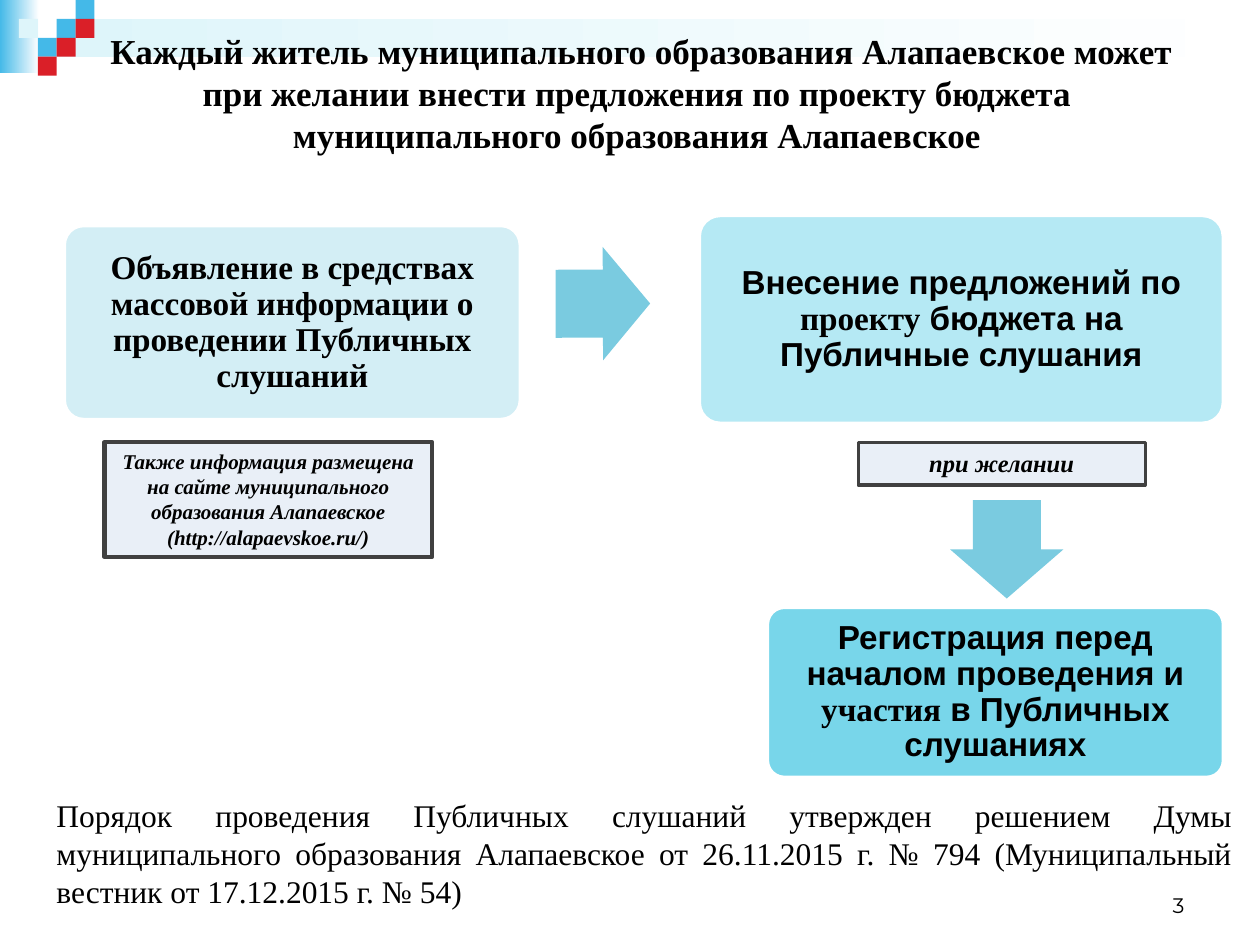
from dataclasses import dataclass

from pptx import Presentation
from pptx.dml.color import RGBColor
from pptx.enum import shapes, text
from pptx.util import Inches, Pt

COLORS = {
    "sky": "44B9E8", "pale": "DEF5FA", "red": "DA1F28", "white": "FFFFFF",
    "announce": "D3EEF5", "propose": "B5E9F4", "register": "78D6EA",
    "arrow": "7ACBE0", "note": "E9EFF7", "border": "404040", "black": "000000",
}
SERIF, SANS = "Times New Roman", "Arial"
SHAPE, ALIGN, ANCHOR = shapes.MSO_SHAPE, text.PP_ALIGN, text.MSO_ANCHOR
SQUARE = 0.15


@dataclass(frozen=True)
class Box:
    left: float
    top: float
    width: float
    height: float

    def lengths(self) -> tuple:
        return tuple(Inches(v) for v in (self.left, self.top, self.width, self.height))


@dataclass(frozen=True)
class Step:
    box: Box
    color: str
    runs: tuple


@dataclass(frozen=True)
class Arrow:
    box: Box
    rotation: float


@dataclass(frozen=True)
class Note:
    box: Box
    border: float
    size: int
    lines: tuple


STEPS = (
    Step(Box(0.51, 1.79, 3.62, 1.54), "announce",
         (("Объявление в средствах массовой информации о проведении Публичных слушаний", SERIF),)),
    Step(Box(5.55, 1.71, 4.16, 1.65), "propose",
         (("Внесение предложений по ", SANS), ("проекту", SERIF),
          (" бюджета на Публичные слушания", SANS))),
    Step(Box(6.09, 4.82, 3.62, 1.35), "register",
         (("Регистрация перед началом проведения и ", SANS), ("участия", SERIF),
          (" в Публичных слушаниях", SANS))),
)
ARROWS = (Arrow(Box(4.41, 1.96, 0.75, 0.9), 359.8), Arrow(Box(7.6, 3.91, 0.78, 0.9), 90))
NOTES = (
    Note(Box(6.81, 3.51, 2.28, 0.34), 1.75, 14, ("при желании",)),
    Note(Box(0.83, 3.51, 2.6, 0.91), 2.5, 12,
         ("Также информация размещена на сайте муниципального образования Алапаевское",
          "(http://alapaevskoe.ru/)")),
)
# Column, row and colour of each corner square
SQUARES = ((3, 1, "sky"), (4, 0, "sky"), (4, 1, "red"), (2, 2, "sky"),
           (1, 1, "pale"), (3, 2, "red"), (2, 3, "red"))


def rgb(name: str) -> RGBColor:
    return RGBColor.from_string(COLORS[name])


def add_figure(slide, kind, box: Box, color: str, border: str = "", width: float = 0):
    figure = slide.shapes.add_shape(kind, *box.lengths())
    figure.shadow.inherit = False
    figure.fill.solid()
    figure.fill.fore_color.rgb = rgb(color)
    if border:
        figure.line.color.rgb = rgb(border)
        figure.line.width = Pt(width)
    else:
        figure.line.fill.background()
    return figure


def add_fade(slide, box: Box, color: str) -> None:
    """Draw a bar that fades to white from left to right."""
    bar = add_figure(slide, SHAPE.RECTANGLE, box, color)
    bar.fill.gradient()
    bar.fill.gradient_angle = 0
    for stop, name, position in zip(bar.fill.gradient_stops, (color, "white"), (0, 1)):
        stop.color.rgb = rgb(name)
        stop.position = position


def format_frame(frame, **values) -> None:
    for name, value in {"word_wrap": True, **values}.items():
        setattr(frame, name, value)


def write(paragraph, words: str, font: str, size: float, **styles) -> None:
    run = paragraph.add_run()
    run.text = words
    for name, value in {"name": font, "size": Pt(size), **styles}.items():
        setattr(run.font, name, value)
    run.font.color.rgb = rgb("black")


def add_corner(slide) -> None:
    add_fade(slide, Box(0, 0, 0.31, 0.58), "sky")
    add_fade(slide, Box(0.45, 0.15, 9.55, 0.3), "pale")
    for column, row, color in SQUARES:
        add_figure(slide, SHAPE.RECTANGLE,
                   Box(column * SQUARE, row * SQUARE, SQUARE, SQUARE), color)


def add_title(slide) -> None:
    title = slide.shapes.title
    slide.shapes.element.append(title.element)  # in front of the corner bars
    title.left, title.top, title.width, title.height = Box(0.59, 0.21, 9, 1.05).lengths()
    format_frame(title.text_frame, vertical_anchor=ANCHOR.MIDDLE,
                 auto_size=text.MSO_AUTO_SIZE.NONE)
    heading = title.text_frame.paragraphs[0]
    heading.alignment = ALIGN.CENTER
    write(heading, "Каждый житель муниципального образования Алапаевское может "
          "при желании внести предложения по проекту бюджета ", SERIF, 20, bold=True)
    heading.add_line_break()
    write(heading, "муниципального образования Алапаевское ", SERIF, 20, bold=True)


def add_step(slide, step: Step) -> None:
    card = add_figure(slide, SHAPE.ROUNDED_RECTANGLE, step.box, step.color, "white", 2)
    card.adjustments[0] = 0.1
    sides = ("margin_left", "margin_top", "margin_right", "margin_bottom")
    format_frame(card.text_frame, vertical_anchor=ANCHOR.MIDDLE,
                 **dict.fromkeys(sides, Inches(0.04)))
    paragraph = card.text_frame.paragraphs[0]
    paragraph.alignment = ALIGN.CENTER
    paragraph.line_spacing = 0.9
    for words, font in step.runs:
        write(paragraph, words, font, 19, bold=True)


def add_arrow(slide, arrow: Arrow) -> None:
    pointer = add_figure(slide, SHAPE.RIGHT_ARROW, arrow.box, "arrow")
    pointer.adjustments[0], pointer.adjustments[1] = 0.6, 0.5
    pointer.rotation = arrow.rotation


def add_note(slide, note: Note) -> None:
    panel = add_figure(slide, SHAPE.RECTANGLE, note.box, "note", "border", note.border)
    frame = panel.text_frame
    format_frame(frame, vertical_anchor=ANCHOR.TOP)
    for index, line in enumerate(note.lines):
        paragraph = frame.add_paragraph() if index else frame.paragraphs[0]
        paragraph.alignment = ALIGN.CENTER
        write(paragraph, line, SERIF, note.size, bold=True, italic=True)


def add_text(slide, box: Box, words: str, font: str, size: float, align, anchor) -> None:
    frame = slide.shapes.add_textbox(*box.lengths()).text_frame
    format_frame(frame, vertical_anchor=anchor)
    frame.paragraphs[0].alignment = align
    write(frame.paragraphs[0], words, font, size)


def main() -> None:
    deck = Presentation()
    deck.slide_width, deck.slide_height = Inches(10), Inches(7.5)
    slide = deck.slides.add_slide(deck.slide_layouts[5])
    add_corner(slide)
    add_title(slide)
    for step in STEPS:
        add_step(slide, step)
    for arrow in ARROWS:
        add_arrow(slide, arrow)
    for note in NOTES:
        add_note(slide, note)
    add_text(slide, Box(0.35, 6.27, 9.53, 1.01),
             "Порядок проведения Публичных слушаний утвержден решением Думы "
             "муниципального образования Алапаевское от 26.11.2015 г. № 794 "
             "(Муниципальный вестник от 17.12.2015 г. № 54)",
             SERIF, 18, ALIGN.JUSTIFY, ANCHOR.TOP)
    add_text(slide, Box(7.17, 6.83, 2.33, 0.5), "3", "Montserrat", 12,
             ALIGN.RIGHT, ANCHOR.BOTTOM)
    deck.save("out.pptx")


if __name__ == "__main__":
    main()
